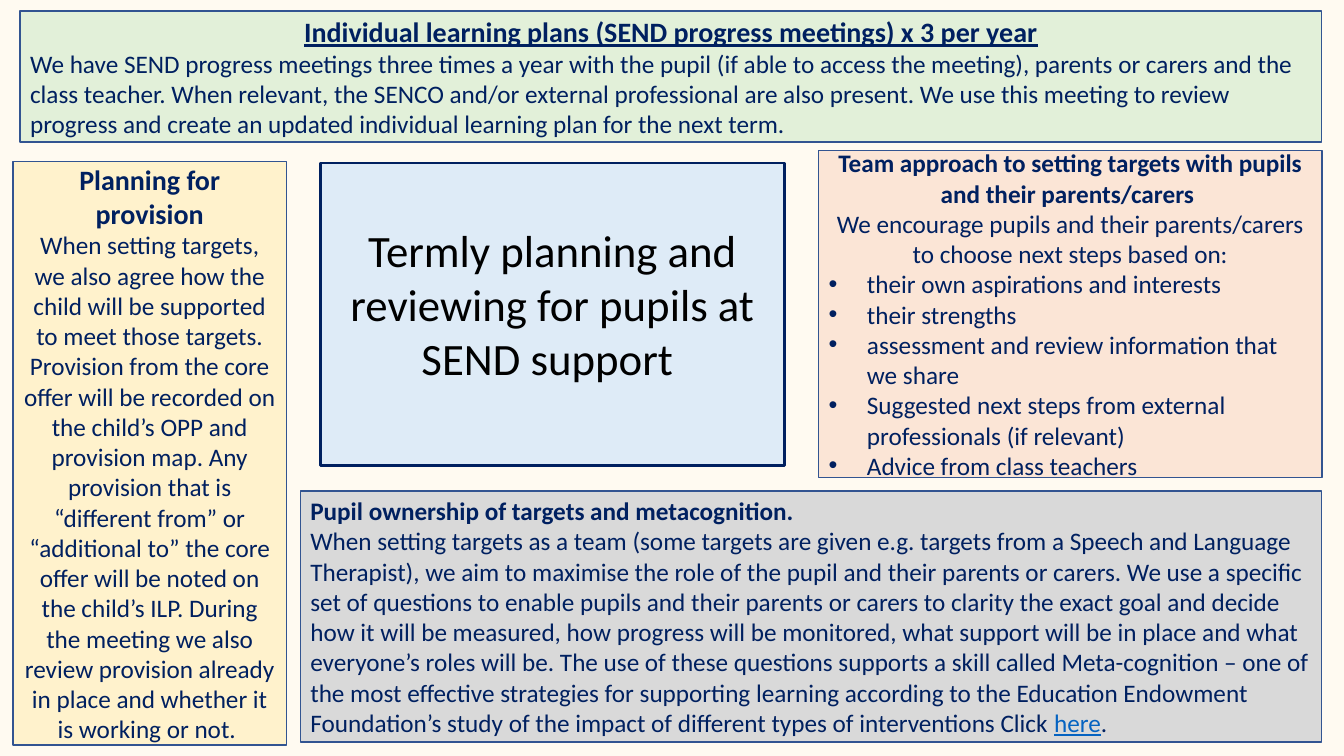
from dataclasses import dataclass

from lxml.etree import SubElement
from pptx import Presentation
from pptx.dml.color import RGBColor
from pptx.enum.shapes import MSO_SHAPE as Shape
from pptx.enum.text import MSO_ANCHOR as Anchor, PP_ALIGN as Align
from pptx.oxml.ns import qn
from pptx.slide import Slide
from pptx.util import Inches, Pt


@dataclass(frozen=True)
class Theme:
    font: str = "Calibri"
    background: str = "FFFAF1"
    navy: str = "002060"
    border: str = "325491"
    black: str = "000000"
    link: str = "0563C1"
    green: str = "E2F0D9"
    peach: str = "FBE5D6"
    grey: str = "D9D9D9"
    yellow: str = "FFF2CC"
    blue: str = "DEEBF7"
    body: int = 18
    heading: int = 20
    title: int = 32


THEME = Theme()


@dataclass(frozen=True)
class Phrase:
    text: str
    color: str = THEME.navy
    bold: bool = False
    underline: bool = False


@dataclass(frozen=True)
class Passage:
    phrases: tuple[Phrase, ...]
    size: int = THEME.body
    align: Align = Align.LEFT
    bullet: bool = False


@dataclass(frozen=True)
class Panel:
    left: float
    top: float
    width: float
    height: float
    fill: str
    passages: tuple[Passage, ...]
    border: str = THEME.border
    border_width: float = 1
    anchor: Anchor = Anchor.MIDDLE
    top_inset: float = 0.05


def heading(text: str, size: int = THEME.body, align: Align = Align.CENTER,
            underline: bool = False) -> Passage:
    return Passage((Phrase(text, bold=True, underline=underline),), size, align)


def body(text: str, align: Align = Align.LEFT, bullet: bool = False) -> Passage:
    return Passage((Phrase(text),), align=align, bullet=bullet)


TARGET_SOURCES = (
    "their own aspirations and interests",
    "their strengths",
    "assessment and review information that we share",
    "Suggested next steps from external professionals (if relevant)",
    "Advice from class teachers",
)

PANELS = (
    Panel(0.2, 0.11, 12.91, 1.3, THEME.green, (
        heading("Individual learning plans (SEND progress meetings) x 3 per year",
                THEME.heading, underline=True),
        body("We have SEND progress meetings three times a year with the pupil "
             "(if able to access the meeting), parents or carers and the class teacher. "
             "When relevant, the SENCO and/or external professional are also present. "
             "We use this meeting to review progress and create an updated individual "
             "learning plan for the next term."),
    )),
    Panel(8.12, 1.49, 4.99, 3.25, THEME.peach, (
        heading("Team approach to setting targets with pupils and their parents/carers "),
        body("We encourage pupils and their parents/carers to choose next steps based on:",
             Align.CENTER),
        *(body(source, bullet=True) for source in TARGET_SOURCES),
    )),
    Panel(2.98, 4.87, 10.13, 2.49, THEME.grey, (
        heading("Pupil ownership of targets and metacognition.", align=Align.LEFT),
        Passage((
            Phrase("When setting targets as a team (some targets are given e.g. targets from "
                   "a Speech and Language Therapist), we aim to maximise the role of the pupil "
                   "and their parents or carers. We use a specific set of questions to enable "
                   "pupils and their parents or carers to clarity the exact goal and decide how "
                   "it will be measured, how progress will be monitored, what support will be in "
                   "place and what everyone’s roles will be. The use of these questions supports "
                   "a skill called Meta-cognition – one of the most effective strategies for "
                   "supporting learning according to the Education Endowment Foundation’s study "
                   "of the impact of different types of interventions Click "),
            Phrase("here", THEME.link, underline=True),
            Phrase("."),
        )),
    )),
    Panel(0.13, 1.6, 2.71, 5.79, THEME.yellow, (
        heading("Planning for provision", THEME.heading),
        body("When setting targets, we also agree how the child will be supported to meet "
             "those targets. Provision from the core offer will be recorded on the child’s "
             "OPP and provision map. Any provision that is “different from” or “additional "
             "to” the core offer will be noted on the child’s ILP. During the meeting we also "
             "review provision already in place and whether it is working or not. ",
             Align.CENTER),
    )),
    Panel(3.18, 1.62, 4.6, 3, THEME.blue, (
        Passage((Phrase("Termly planning and reviewing for pupils at SEND support ",
                        THEME.black),), THEME.title, Align.CENTER),
    ), THEME.navy, 1.75, Anchor.TOP, 0.59),
)


def rgb(color: str) -> RGBColor:
    return RGBColor.from_string(color)


def add_bullet(paragraph) -> None:
    properties = paragraph._p.get_or_add_pPr()
    indent = Inches(0.38)
    properties.set("marL", str(indent))
    properties.set("indent", str(-indent))
    SubElement(properties, qn("a:buFont")).set("typeface", "Arial")
    SubElement(properties, qn("a:buChar")).set("char", "•")


def write_passage(paragraph, passage: Passage) -> None:
    if passage.bullet:
        add_bullet(paragraph)
    paragraph.alignment = passage.align
    for phrase in passage.phrases:
        run = paragraph.add_run()
        run.text = phrase.text
        run.font.name = THEME.font
        run.font.size = Pt(passage.size)
        run.font.bold = phrase.bold
        run.font.underline = phrase.underline
        run.font.color.rgb = rgb(phrase.color)


def draw_panel(slide: Slide, panel: Panel) -> None:
    box = slide.shapes.add_shape(
        Shape.RECTANGLE, Inches(panel.left), Inches(panel.top),
        Inches(panel.width), Inches(panel.height))
    box.shadow.inherit = False
    box.fill.solid()
    box.fill.fore_color.rgb = rgb(panel.fill)
    box.line.color.rgb = rgb(panel.border)
    box.line.width = Pt(panel.border_width)
    frame = box.text_frame
    frame.word_wrap = True
    frame.vertical_anchor = panel.anchor
    frame.margin_top = Inches(panel.top_inset)
    for index, passage in enumerate(panel.passages):
        paragraph = frame.add_paragraph() if index else frame.paragraphs[0]
        write_passage(paragraph, passage)


def main() -> None:
    deck = Presentation()
    deck.slide_width = Inches(13.33)
    deck.slide_height = Inches(7.5)
    slide = deck.slides.add_slide(deck.slide_layouts[6])
    slide.background.fill.solid()
    slide.background.fill.fore_color.rgb = rgb(THEME.background)
    for panel in PANELS:
        draw_panel(slide, panel)
    deck.save("out.pptx")


if __name__ == "__main__":
    main()
